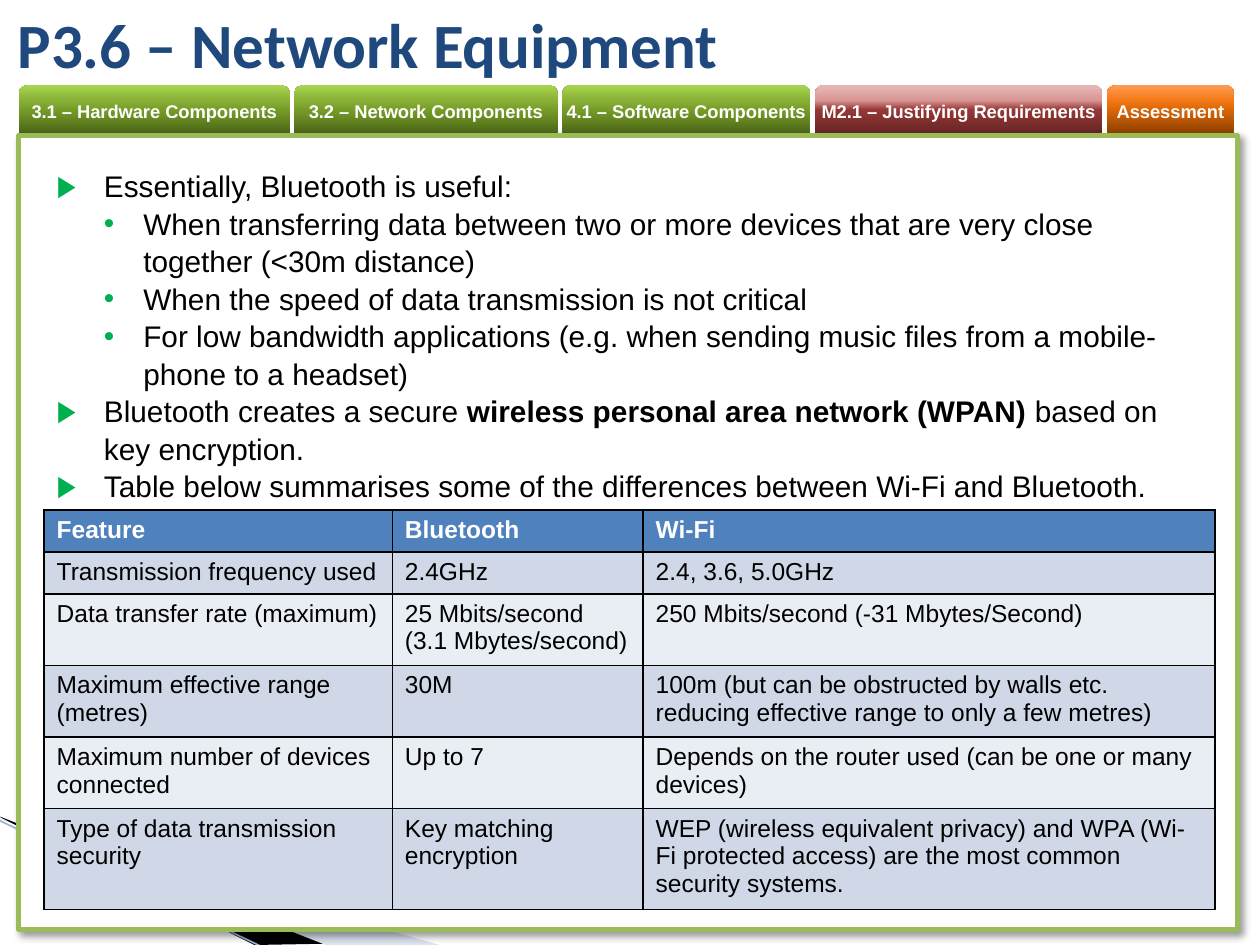
from lxml.etree import SubElement
from pptx import Presentation
from pptx.dml.color import RGBColor
from pptx.enum.shapes import MSO_CONNECTOR, MSO_SHAPE
from pptx.enum.text import MSO_ANCHOR, MSO_AUTO_SIZE, PP_ALIGN
from pptx.oxml.ns import qn
from pptx.util import Pt

COLORS = {
    "title": "1F497D", "text": "000000", "white": "FFFFFF", "frame": "9BBB59",
    "bullet": "00B050", "header": "4F81BD", "band_dark": "D0D8E8",
    "band_light": "E9EDF4", "swoosh": "A7B9DB", "swoosh_line": "9EB3D6",
}
GRADIENT_STOPS = (0, 50, 70, 100)
GREEN = ("4A6316", "769C27", "89B137", "A9D651")
RED = ("632523", "953735", "D99694", "E6B9B8")
ORANGE = ("8B3F00", "DA6606", "F47917", "FF9C54")

TABS = [
    ("3.1 – Hardware Components", 154.8, GREEN),
    ("3.2 – Network Components", 150.5, GREEN),
    ("4.1 – Software Components", 141.8, GREEN),
    ("M2.1 – Justifying Requirements", 164.2, RED),
    ("Assessment", 72.7, ORANGE),
]
TAB_LEFT, TAB_GAP = 10.8, 2.6

# Each point: level, then (text, bold) runs
POINTS = [
    (0, [("Essentially, Bluetooth is useful:", False)]),
    (1, [("When transferring data between two or more devices that are very close "
          "together (<30m distance)", False)]),
    (1, [("When the speed of data transmission is not critical", False)]),
    (1, [("For low bandwidth applications (e.g. when sending music files from a "
          "mobile-phone to a headset)", False)]),
    (0, [("Bluetooth creates a secure ", False),
         ("wireless personal area network (WPAN)", True),
         (" based on key encryption.", False)]),
    (0, [("Table below summarises some of the differences between Wi-Fi and "
          "Bluetooth.", False)]),
]
# Bullet character, left margin and hanging indent of each level
LEVELS = [("▶", 27, 27), ("•", 49.5, 22.5)]

COMPARISON = [
    ("Feature", "Bluetooth", "Wi-Fi"),
    ("Transmission frequency used", "2.4GHz", "2.4, 3.6, 5.0GHz"),
    ("Data transfer rate (maximum)", "25 Mbits/second (3.1 Mbytes/second)",
     "250 Mbits/second (-31 Mbytes/Second)"),
    ("Maximum effective range (metres)", "30M",
     "100m (but can be obstructed by walls etc. reducing effective range to only "
     "a few metres)"),
    ("Maximum number of devices connected", "Up to 7",
     "Depends on the router used (can be one or many devices)"),
    ("Type of data transmission security", "Key matching encryption",
     "WEP (wireless equivalent privacy) and WPA (Wi-Fi protected access) are the "
     "most common security systems."),
]
COLUMN_WIDTHS = (199, 143.3, 326.9)
ROW_HEIGHTS = (24, 24, 40.9, 40.9, 40.9, 57.7)


def rgb(name):
    return RGBColor.from_string(COLORS[name])


def add_alpha(parent, percent):
    SubElement(parent, qn("a:alpha"), val=str(percent * 1000))


class SlideBuilder:
    font = "Arial"

    def __init__(self, slide):
        self.slide = slide
        self.shapes = slide.shapes

    def run(self, paragraph, text, size, color, bold=False, font=None):
        run = paragraph.add_run()
        run.text = text
        run.font.name = font or self.font
        run.font.size = Pt(size)
        run.font.bold = bold
        run.font.color.rgb = rgb(color)

    def placeholder(self, index, left, top, width, height, anchor):
        """Move a placeholder to its place, in front of what is drawn so far."""
        holder = self.slide.placeholders[index]
        holder.left, holder.top = Pt(left), Pt(top)
        holder.width, holder.height = Pt(width), Pt(height)
        tree = holder.element.getparent()
        tree.append(holder.element)
        frame = holder.text_frame
        frame.word_wrap = True
        frame.auto_size = MSO_AUTO_SIZE.NONE
        frame.vertical_anchor = anchor
        return frame

    def swoosh(self, points, color, opacity=100):
        corners = [(Pt(x), Pt(y)) for x, y in points]
        builder = self.shapes.build_freeform(*corners[0], scale=1.0)
        builder.add_line_segments(corners[1:], close=True)
        shape = builder.convert_to_shape()
        shape.shadow.inherit = False
        shape.line.fill.background()
        shape.fill.solid()
        shape.fill.fore_color.rgb = rgb(color)
        if opacity < 100:
            add_alpha(shape.element.spPr.find(".//" + qn("a:srgbClr")), opacity)

    def line(self, start, end, color, width):
        x1, y1, x2, y2 = (Pt(value) for value in (*start, *end))
        connector = self.shapes.add_connector(MSO_CONNECTOR.STRAIGHT, x1, y1, x2, y2)
        connector.line.color.rgb = rgb(color)
        connector.line.width = Pt(width)
        SubElement(connector.element.spPr, qn("a:effectLst"))

    def tab(self, label, left, width, gradient):
        shape = self.shapes.add_shape(MSO_SHAPE.ROUND_2_SAME_RECTANGLE,
                                      Pt(left), Pt(48.8), Pt(width), Pt(28))
        shape.shadow.inherit = False
        shape.line.fill.background()
        shape.fill.gradient()
        shape.fill.gradient_angle = 90
        stops = shape.element.spPr.find(".//" + qn("a:gsLst"))
        stops.clear()
        for position, color in zip(GRADIENT_STOPS, gradient):
            stop = SubElement(stops, qn("a:gs"), pos=str(position * 1000))
            SubElement(stop, qn("a:srgbClr"), val=color)
        frame = shape.text_frame
        frame.margin_left = frame.margin_right = 0
        frame.margin_top = frame.margin_bottom = 0
        frame.word_wrap = True
        frame.vertical_anchor = MSO_ANCHOR.MIDDLE
        frame.paragraphs[0].alignment = PP_ALIGN.CENTER
        self.run(frame.paragraphs[0], label, 10.5, "white", bold=True)

    def panel(self, left, top, width, height):
        shape = self.shapes.add_shape(MSO_SHAPE.RECTANGLE,
                                      Pt(left), Pt(top), Pt(width), Pt(height))
        shape.fill.solid()
        shape.fill.fore_color.rgb = rgb("white")
        shape.line.color.rgb = rgb("frame")
        shape.line.width = Pt(3)
        effects = SubElement(shape.element.spPr, qn("a:effectLst"))
        shadow = SubElement(effects, qn("a:outerShdw"), blurRad=str(Pt(4)),
                            dist=str(Pt(3)), dir=str(45 * 60000), algn="tl",
                            rotWithShape="0")
        add_alpha(SubElement(shadow, qn("a:srgbClr"), val=COLORS["text"]), 40)

    def title(self, text):
        frame = self.placeholder(0, 2.9, 0, 607, 49, MSO_ANCHOR.MIDDLE)
        frame.paragraphs[0].alignment = PP_ALIGN.LEFT
        self.run(frame.paragraphs[0], text, 36, "title", bold=True, font="Calibri")

    def bullets(self, points):
        frame = self.placeholder(1, 25.2, 91.4, 663.1, 193, MSO_ANCHOR.TOP)
        for index, (level, runs) in enumerate(points):
            paragraph = frame.add_paragraph() if index else frame.paragraphs[0]
            paragraph.level = level
            paragraph.space_before = Pt(0)
            paragraph.line_spacing = 1.05
            character, margin, hanging = LEVELS[level]
            properties = paragraph._p.get_or_add_pPr()
            properties.set("marL", str(Pt(margin)))
            properties.set("indent", str(-Pt(hanging)))
            color = SubElement(properties, qn("a:buClr"))
            SubElement(color, qn("a:srgbClr"), val=COLORS["bullet"])
            SubElement(properties, qn("a:buFont"), typeface=self.font)
            SubElement(properties, qn("a:buChar"), char=character)
            for text, bold in runs:
                self.run(paragraph, text, 17, "text", bold)

    def cell_borders(self, cell):
        properties = cell._tc.get_or_add_tcPr()
        for side in ("lnL", "lnR", "lnT", "lnB"):
            border = SubElement(properties, qn("a:" + side), w=str(Pt(1)))
            fill = SubElement(border, qn("a:solidFill"))
            SubElement(fill, qn("a:srgbClr"), val=COLORS["text"])

    def table(self, rows, left, top):
        table = self.shapes.add_table(
            len(rows), len(COLUMN_WIDTHS), Pt(left), Pt(top),
            Pt(sum(COLUMN_WIDTHS)), Pt(sum(ROW_HEIGHTS))).table
        for column, width in zip(table.columns, COLUMN_WIDTHS):
            column.width = Pt(width)
        for r, texts in enumerate(rows):
            table.rows[r].height = Pt(ROW_HEIGHTS[r])
            band = "header" if r == 0 else ("band_light", "band_dark")[r % 2]
            for c, text in enumerate(texts):
                cell = table.cell(r, c)
                self.cell_borders(cell)
                cell.fill.solid()
                cell.fill.fore_color.rgb = rgb(band)
                self.run(cell.text_frame.paragraphs[0], text, 14,
                         "text" if r else "white", bold=r == 0)


def main():
    presentation = Presentation()
    presentation.slide_width, presentation.slide_height = Pt(720), Pt(540)
    builder = SlideBuilder(presentation.slides.add_slide(presentation.slide_layouts[1]))

    builder.swoosh([(-1.4, 468), (251.3, 540), (186.5, 540), (-1.4, 467.3)],
                   "swoosh", opacity=40)
    builder.swoosh([(0, 466.6), (184.3, 539.3), (145.4, 540), (0.7, 467.3)], "text")
    builder.line((-0.7, 468.7), (150.5, 541.4), "swoosh_line", 0.95)

    left = TAB_LEFT
    for label, width, gradient in TABS:
        builder.tab(label, left, width, gradient)
        left += width + TAB_GAP
    builder.panel(10.8, 77.6, 696.2, 453.6)
    builder.bullets(POINTS)
    builder.table(COMPARISON, 25.2, 291.4)
    builder.title("P3.6 – Network Equipment")
    presentation.save("out.pptx")


if __name__ == "__main__":
    main()
